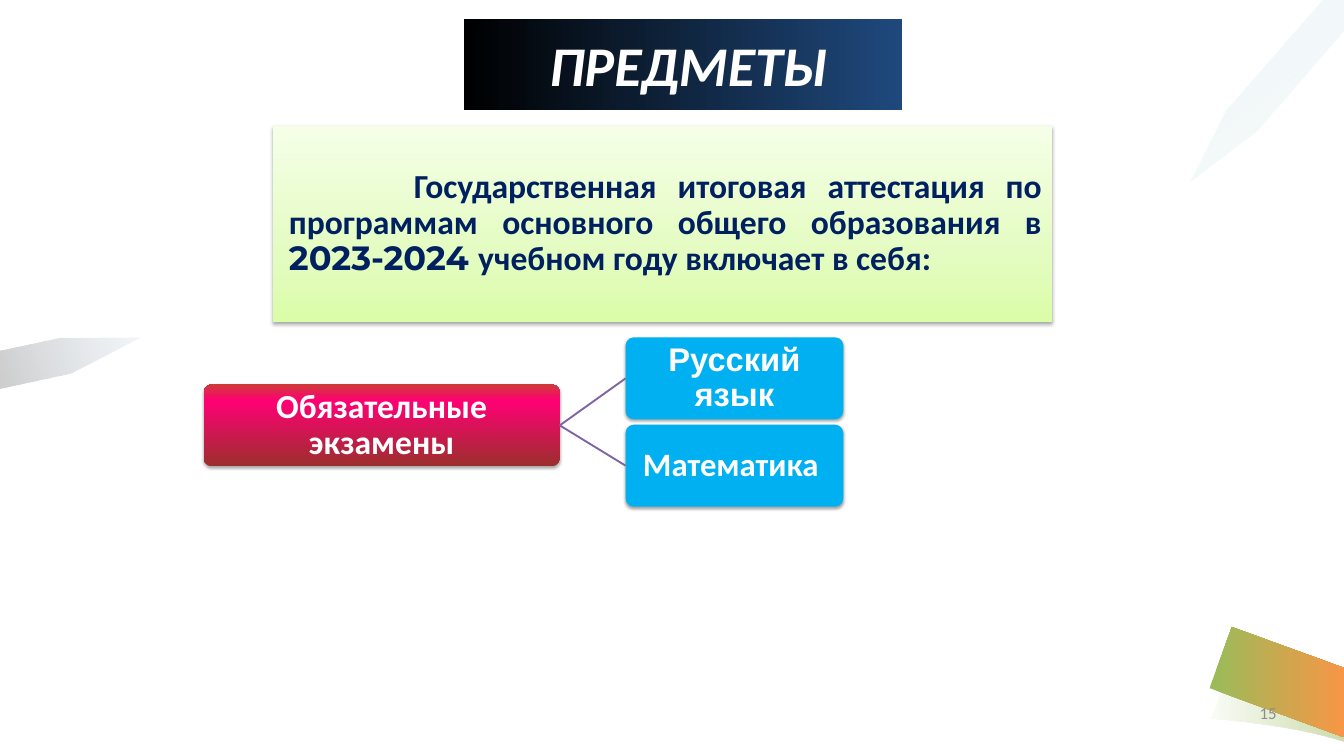
from lxml import etree
from pptx import Presentation
from pptx.dml.color import RGBColor
from pptx.enum import shapes, text
from pptx.oxml.ns import qn
from pptx.util import Inches, Pt

WHITE, NAVY, SKY = "FFFFFF", "002060", "00B0F0"


def color(value):
    return RGBColor.from_string(value)


def gradient(shape, stops, angle):
    """Fill with (percent, colour, opacity percent) stops, angle clockwise."""
    shape.fill.gradient()
    shape.fill.gradient_angle = (360 - angle) % 360
    stop_list = shape.fill._xPr.find(qn("a:gradFill")).find(qn("a:gsLst"))
    for old in list(stop_list):
        stop_list.remove(old)
    for position, value, opacity in stops:
        stop = etree.SubElement(stop_list, qn("a:gs"), pos=str(position * 1000))
        tint = etree.SubElement(stop, qn("a:srgbClr"), val=value)
        if opacity < 100:
            etree.SubElement(tint, qn("a:alpha"), val=str(opacity * 1000))


def drop_shadow(shape, opacity, blur, distance):
    effects = shape._element.spPr.find(qn("a:effectLst"))
    shadow = etree.SubElement(effects, qn("a:outerShdw"), blurRad=str(Pt(blur)),
                              dist=str(Pt(distance)), dir="5400000", rotWithShape="0")
    tint = etree.SubElement(shadow, qn("a:srgbClr"), val="000000")
    etree.SubElement(tint, qn("a:alpha"), val=str(opacity * 1000))


def place(shape, box):
    shape.left, shape.top, shape.width, shape.height = (Inches(v) for v in box)


def write(shape, spans, size, align, margins, font="Calibri", bold=True):
    """Write one paragraph of (text, colour, font) spans and return it."""
    frame = shape.text_frame
    frame.word_wrap = True
    frame.auto_size = text.MSO_AUTO_SIZE.NONE
    frame.vertical_anchor = text.MSO_ANCHOR.MIDDLE
    (frame.margin_left, frame.margin_top,
     frame.margin_right, frame.margin_bottom) = (Inches(m) for m in margins)
    para = frame.paragraphs[0]
    para.alignment = align
    para.font.size, para.font.bold, para.font.name = Pt(size), bold, font
    para.font.color.rgb = color(spans[0][1])
    for words, _, face in spans:
        span = para.add_run()
        span.text = words
        if face != font:
            span.font.name = face
    return para


def add_block(page, kind, box):
    block = page.shapes.add_shape(kind, *(Inches(v) for v in box))
    block.shadow.inherit = False
    block.line.fill.background()
    return block


def curve(start, first, second, end, steps=12):
    """Points along a cubic curve, start included."""
    weights = [((1 - t) ** 3, 3 * t * (1 - t) ** 2, 3 * t * t * (1 - t), t ** 3)
               for t in (i / steps for i in range(steps + 1))]
    return [tuple(sum(w * p[axis] for w, p in zip(row, (start, first, second, end)))
                  for axis in (0, 1)) for row in weights]


def add_decoration(page):
    ribbon_shade = (curve((18.03, 10.69), (18.03, 10.69), (19.17, 10.76), (20, 11.03))
                    + curve((20, 10.02), (19.08, 9.76), (18.36, 9.78), (18.36, 9.78)))
    pieces = [
        (ribbon_shade, [(3, "9BBB59", 6), (100, "9BBB59", 50)], 0),
        ([(20, 9.94), (18.33, 9.33), (18, 10.24), (20, 10.97)],
         [(3, "9BBB59", 100), (100, "F79646", 100)], 0),
        ([(2.11, 5.03), (0.87, 5.04), (0, 5.22), (0, 5.78), (1.05, 5.56)],
         [(0, "1F497D", 5), (100, "000000", 20)], 164),
        ([(19.68, 0), (18.25, 1.64), (17.72, 2.7), (18.71, 1.95), (19.99, 0.47), (19.99, 0)],
         [(0, "4BACC6", 5), (100, "EEECE1", 20)], 53),
    ]
    for outline, stops, angle in pieces:
        points = [(Inches(x), Inches(y)) for x, y in outline]
        builder = page.shapes.build_freeform(*points[0])
        builder.add_line_segments(points[1:], close=True)
        piece = builder.convert_to_shape()
        piece.shadow.inherit = False
        piece.line.fill.background()
        gradient(piece, stops, angle)


def add_title(page, box):
    title = page.shapes.title
    place(title, box)
    gradient(title, [(0, "1F497D", 100), (100, "000000", 100)], 180)
    para = write(title, [("ПРЕДМЕТЫ", WHITE, "Calibri")], 60,
                 text.PP_ALIGN.CENTER, (0.16, 0, 0, 0))
    para.font.italic = True


def add_statement(page, box):
    panel = add_block(page, shapes.MSO_SHAPE.RECTANGLE, box)
    gradient(panel, [(0, "DAFDA7", 100), (35, "E4FCC2", 100), (100, "F5FFE7", 100)], 270)
    drop_shadow(panel, 32, 3.5, 2.2)
    spans = [
        ("Государственная итоговая аттестация по программам основного общего образования в ",
         NAVY, "Calibri"),
        ("2023-2024 ", NAVY, "Montserrat"),
        ("учебном году включает в себя:", NAVY, "Calibri"),
    ]
    para = write(panel, spans, 36, text.PP_ALIGN.JUSTIFY, (0.24, 0.07, 0.15, 0.07))
    para.line_spacing = 0.9
    para._p.get_or_add_pPr().set("indent", str(Inches(1.86)))


def add_node(page, box, words, size, font="Calibri"):
    node = add_block(page, shapes.MSO_SHAPE.ROUNDED_RECTANGLE, box)
    node.adjustments[0] = 0.1
    node.fill.solid()
    node.fill.fore_color.rgb = color(SKY)
    drop_shadow(node, 35, 3.1, 1.8)
    para = write(node, [(words, WHITE, font)], size, text.PP_ALIGN.CENTER,
                 (0.02,) * 4, font)
    para.line_spacing = 0.9
    return node


def add_exam_tree(page, box):
    left, top, width, height = box
    node_height, subject_width = 1.22, 3.24
    step = height - node_height
    root = add_node(page, (left, top + step / 2 + 0.05, 5.3, node_height),
                    "Обязательные экзамены", 36)
    gradient(root, [(0, "9C2F2D", 100), (80, "FF0074", 100), (100, "CE3B37", 100)], 270)
    subjects = [("Русский язык", "Arial"), ("Математика ", "Calibri")]
    for row, (subject, font) in enumerate(subjects):
        node = add_node(page, (left + width - subject_width, top + row * step,
                               subject_width, node_height), subject, 35, font)
        link = page.shapes.add_connector(shapes.MSO_CONNECTOR.STRAIGHT, 0, 0, 0, 0)
        link.begin_connect(root, 3)
        link.end_connect(node, 1)
        link.line.color.rgb = color("8064A2")
        link.line.width = Pt(2)
        etree.SubElement(link._element.spPr, qn("a:effectLst"))


def add_page_number(page, box):
    number = page.shapes.add_textbox(*(Inches(v) for v in box))
    write(number, [("15", "8C8C8C", "Calibri")], 18, text.PP_ALIGN.RIGHT,
          (0,) * 4, bold=False)


def main():
    deck = Presentation()
    deck.slide_width, deck.slide_height = Inches(20), Inches(11.25)
    page = deck.slides.add_slide(deck.slide_layouts[5])
    add_decoration(page)
    add_page_number(page, (14.4, 10.46, 4.6, 0.3))
    add_title(page, (6.91, 0.28, 6.51, 1.36))
    add_exam_tree(page, (3.03, 5.02, 9.52, 2.52))
    add_statement(page, (4.06, 1.87, 11.6, 2.92))
    deck.save("out.pptx")


if __name__ == "__main__":
    main()
